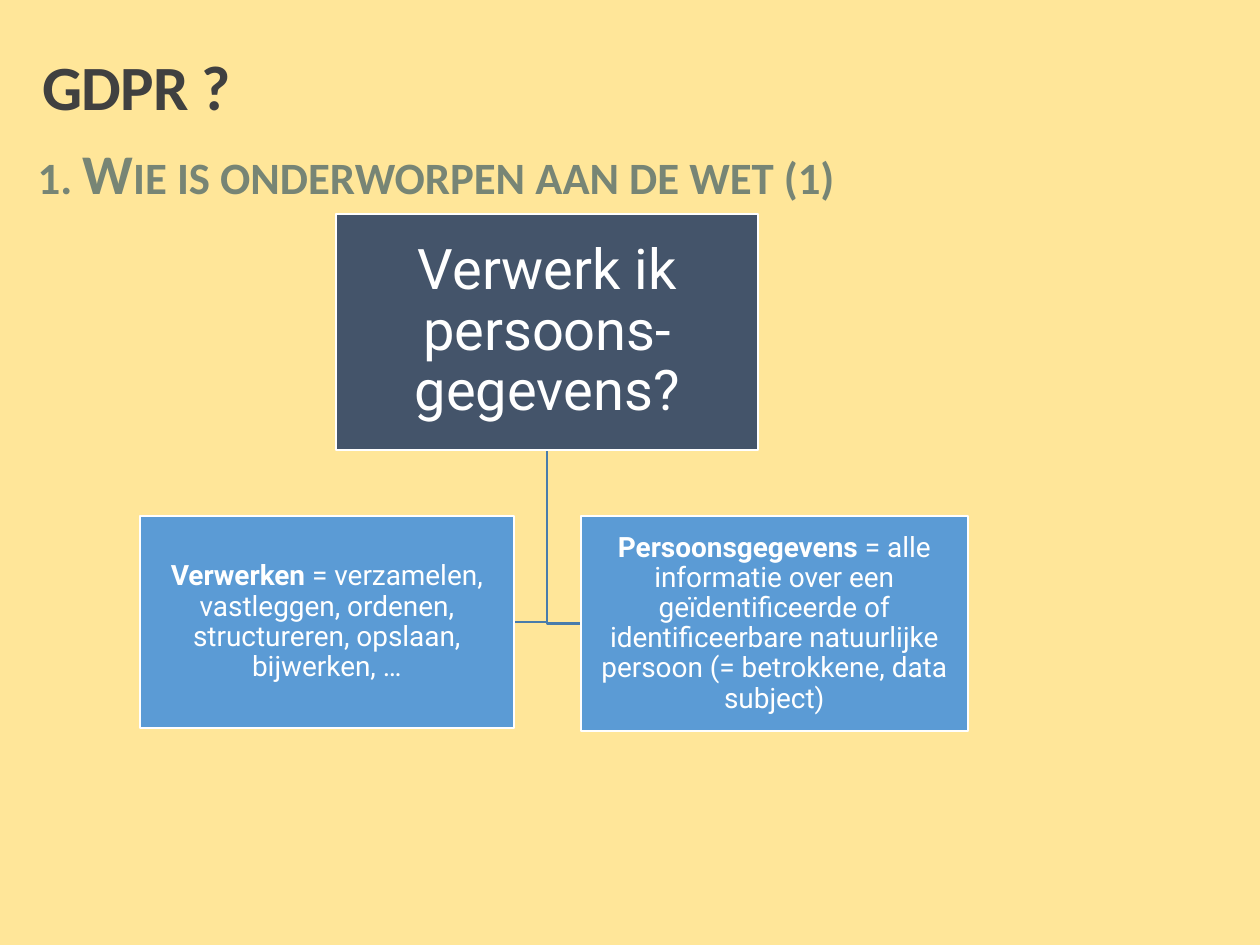
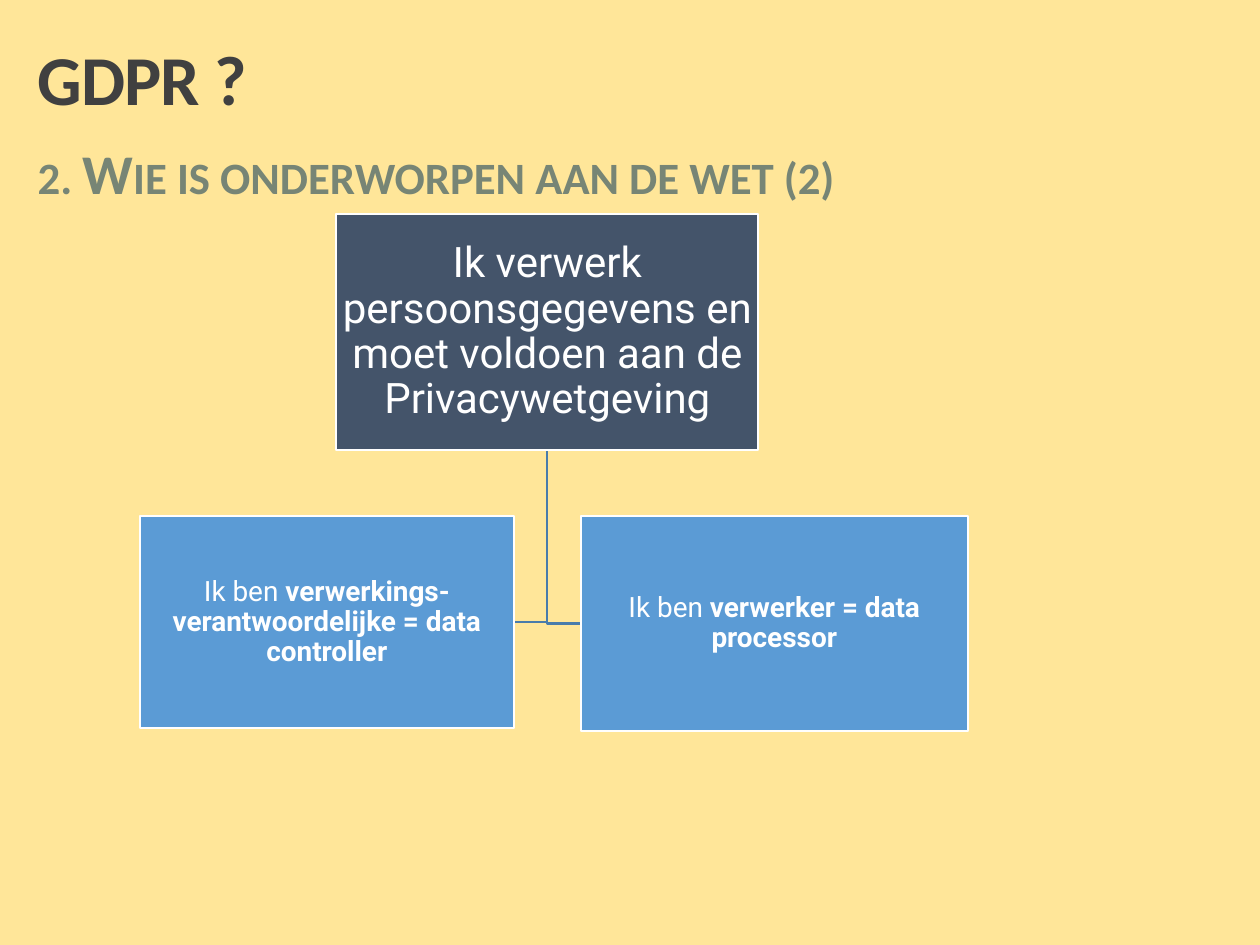
from pptx import Presentation
from pptx.dml.color import RGBColor
from pptx.enum.shapes import MSO_SHAPE
from pptx.enum.text import MSO_ANCHOR, MSO_AUTO_SIZE, PP_ALIGN
from pptx.util import Cm, Pt

# Content: texts are lists of (words, bold)
SLIDES = [
    {
        "title": {"at": (0.61, 0.1, 20.96, 4.04), "size": 36, "bottom": 1.65},
        "subtitle": "1. Wie is onderworpen aan de wet (1)",
        "question": ([("Verwerk ik persoons-gegevens?", False)], 32),
        "answers": [
            [("Verwerken", True),
             (" = verzamelen, vastleggen, ordenen, structureren, "
              "opslaan, bijwerken, …", False)],
            [("Persoonsgegevens", True),
             (" = alle informatie over een geïdentificeerde of "
              "identificeerbare natuurlijke persoon "
              "(= betrokkene, data subject)", False)],
        ],
    },
    {
        "title": {"at": (0.51, 0.08, 22.53, 4.09), "size": 40, "bottom": 1.75},
        "subtitle": "2. Wie is onderworpen aan de wet (2)",
        "question": ([("Ik verwerk persoonsgegevens en moet voldoen aan de "
                       "Privacywetgeving", False)], 24),
        "answers": [
            [("Ik ben ", False),
             ("verwerkings-verantwoordelijke = data controller", True)],
            [("Ik ben ", False), ("verwerker = data processor", True)],
        ],
    },
]

# Shared look, places in centimetres: left, top, width, height
BACKGROUND, TITLE_COLOR, SUBTITLE_COLOR = "FFE699", "404040", "778575"
QUESTION_FILL, ANSWER_FILL, ELBOW_COLOR, WHITE = "44546A", "5B9BD5", "497CAB", "FFFFFF"
SUBTITLE_AT = (0.51, 2.67, 22.81, 1.63)
QUESTION_AT = (6.78, 4.32, 8.51, 4.75)
ANSWERS_AT = [(2.82, 10.41, 7.54, 4.27), (11.71, 10.41, 7.8, 4.32)]
LINE_WIDTH = Pt(1.25)


def color(code):
    return RGBColor.from_string(code)


def lengths(place):
    return [Cm(value) for value in place]


def style(span, font, size, code, bold):
    span.font.name, span.font.size, span.font.bold = font, Pt(size), bold
    span.font.color.rgb = color(code)


def add_heading(page, place, text, size, code):
    box = page.shapes.add_textbox(*lengths(place))
    frame = box.text_frame
    frame.word_wrap = True
    frame.text = text
    para = frame.paragraphs[0]
    style(para.runs[0], "Calibri", size, code, True)
    return frame, para


def add_title(page, at, size, bottom):
    frame, para = add_heading(page, at, "GDPR ?", size, TITLE_COLOR)
    frame.vertical_anchor = MSO_ANCHOR.BOTTOM
    frame.margin_bottom = Cm(bottom)
    para.line_spacing = 0.85
    para.runs[0].font._element.set("spc", "-50")


def add_subtitle(page, text):
    frame, para = add_heading(page, SUBTITLE_AT, text, 32, SUBTITLE_COLOR)
    frame.auto_size = MSO_AUTO_SIZE.SHAPE_TO_FIT_TEXT
    para.runs[0].font._element.set("cap", "small")


def add_card(page, place, spans, size, fill, inset):
    card = page.shapes.add_shape(MSO_SHAPE.RECTANGLE, *lengths(place))
    card.shadow.inherit = False
    card.fill.solid()
    card.fill.fore_color.rgb = color(fill)
    card.line.color.rgb = color(WHITE)
    card.line.width = LINE_WIDTH
    frame = card.text_frame
    frame.word_wrap = True
    frame.vertical_anchor = MSO_ANCHOR.MIDDLE
    frame.margin_left = frame.margin_right = Cm(inset)
    frame.margin_top = frame.margin_bottom = Cm(inset)
    para = frame.paragraphs[0]
    para.alignment = PP_ALIGN.CENTER
    para.line_spacing = 0.9
    for words, bold in spans:
        span = para.add_run()
        span.text = words
        style(span, "Roboto", size, WHITE, bold)


def add_elbow(page, place):
    """Drop from the question, then turn to the nearer side of an answer."""
    left, top, width, height = lengths(QUESTION_AT)
    trunk, start = left + width // 2, top + height
    left, top, width, height = lengths(place)
    side = left if left > trunk else left + width
    middle = top + height // 2
    builder = page.shapes.build_freeform(trunk, start)
    builder.add_line_segments([(trunk, middle), (side, middle)], close=False)
    elbow = builder.convert_to_shape()
    elbow.shadow.inherit = False
    elbow.fill.background()
    elbow.line.color.rgb = color(ELBOW_COLOR)
    elbow.line.width = LINE_WIDTH


def main():
    deck = Presentation()
    deck.slide_width, deck.slide_height = Cm(25.4), Cm(19.05)
    for content in SLIDES:
        page = deck.slides.add_slide(deck.slide_layouts[6])
        page.background.fill.solid()
        page.background.fill.fore_color.rgb = color(BACKGROUND)
        add_title(page, **content["title"])

        # Decision tree, elbows behind the cards
        for place in reversed(ANSWERS_AT):
            add_elbow(page, place)
        spans, size = content["question"]
        add_card(page, QUESTION_AT, spans, size, QUESTION_FILL, 0.05)
        for place, spans in zip(ANSWERS_AT, content["answers"]):
            add_card(page, place, spans, 16, ANSWER_FILL, 0.03)

        add_subtitle(page, content["subtitle"])
    deck.save("out.pptx")


if __name__ == "__main__":
    main()
